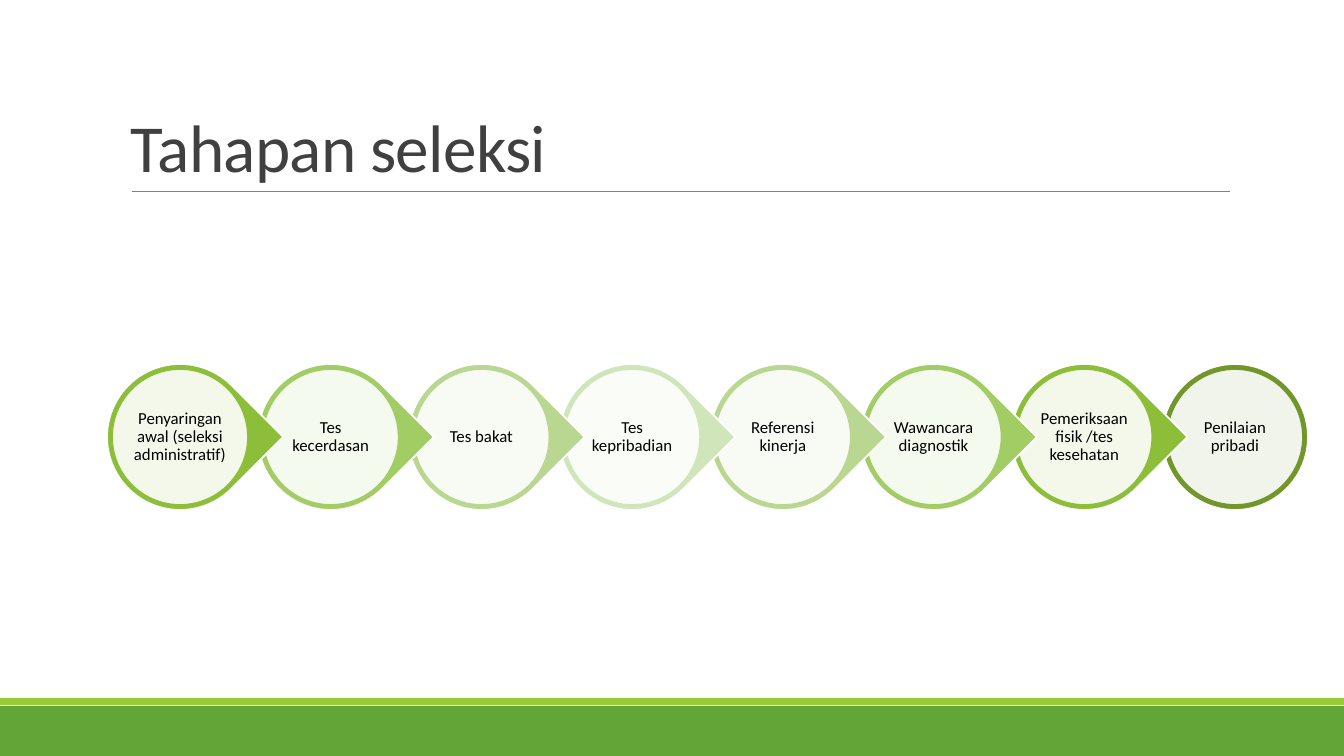
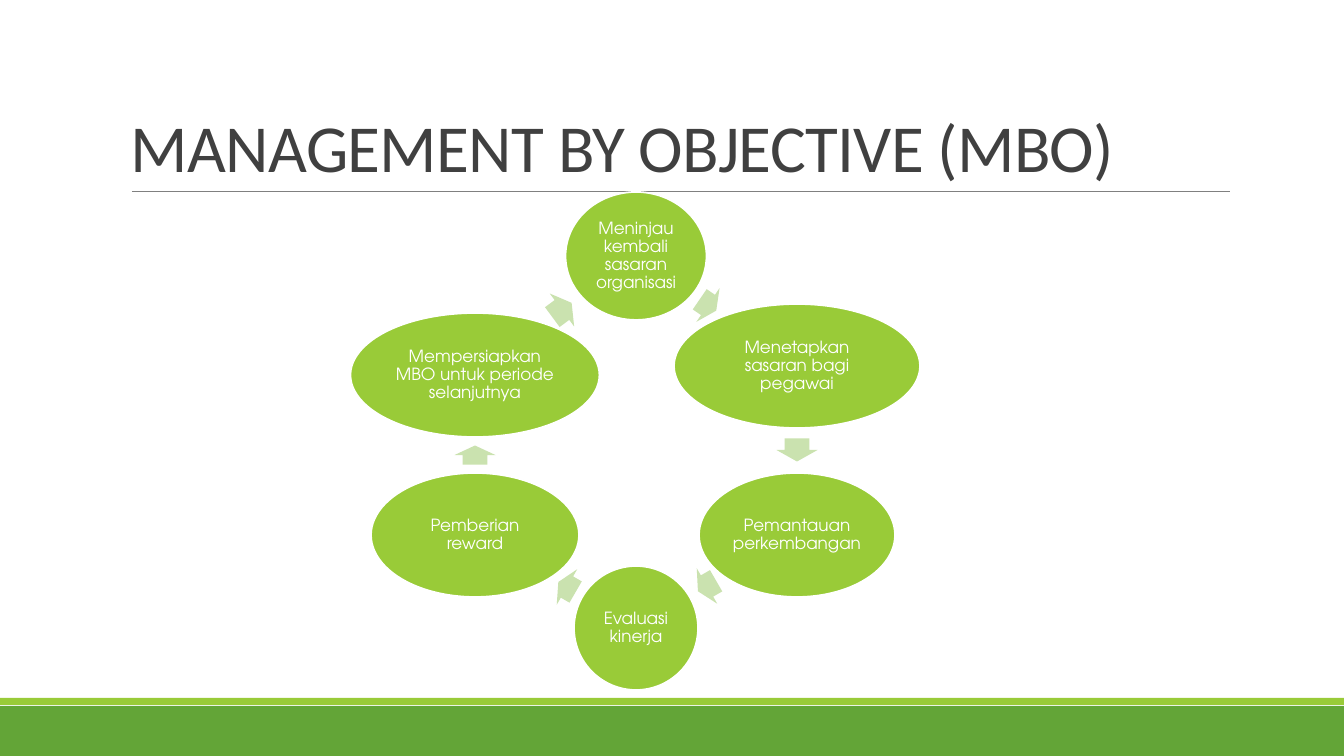
from dataclasses import dataclass
from typing import NamedTuple

from lxml.etree import SubElement
from pptx import Presentation
from pptx.dml.color import RGBColor
from pptx.enum.shapes import MSO_CONNECTOR as Connector, MSO_SHAPE as Shape
from pptx.enum.text import MSO_ANCHOR as Anchor, PP_ALIGN as Align
from pptx.oxml.ns import qn
from pptx.util import Emu, Pt

EMU_PER_PX = 914400 / 100.8


@dataclass(frozen=True)
class Theme:
    """Colours, fonts and type sizes shared by the slides."""
    white: str = "FFFFFF"
    black: str = "000000"
    title: str = "404040"
    rule: str = "808080"
    band: str = "63A537"
    accent: str = "99CB38"
    arrow: str = "CAE2AF"
    stages: tuple = ("8DBE39", "A2CC64", "B9D790", "D1E5BB",
                     "B9D790", "A2CC64", "8DBE39", "719629")
    body_font: str = "Calibri"
    cycle_font: str = "TeX Gyre Adventor"
    title_size: int = 48
    label_size: int = 12
    outline: float = 1.25
    rule_width: float = 0.5


class Box(NamedTuple):
    """A rectangle in px."""
    left: float
    top: float
    width: float
    height: float


class Step(NamedTuple):
    """A cycle step and the arrow after it, as px offsets from the cycle centre."""
    label: str
    centre: tuple
    size: tuple
    arrow_centre: tuple
    arrow_length: int
    arrow_angle: float


THEME = Theme()
SLIDE = Box(0, 0, 1344, 756)
TITLE = Box(121, 31, 1109, 160)
STAGE_ROW = Box(107, 364, 1201, 146)
CYCLE = Box(352, 192, 568, 496)
RING = 5
ARROW_WIDTH = 41
COLUMN = 161

STAGES = (
    "Penyaringan awal (seleksi administratif)", "Tes kecerdasan", "Tes bakat",
    "Tes kepribadian", "Referensi kinerja", "Wawancara diagnostik",
    "Pemeriksaan fisik /tes kesehatan", "Penilaian pribadi",
)
STEPS = (
    Step("Meninjau kembali sasaran organisasi",
         (0, -184), (141, 128), (72, -135), 20, 34.5),
    Step("Menetapkan sasaran bagi pegawai",
         (COLUMN, -74), (246, 124), (COLUMN, 10), 23, 90),
    Step("Pemantauan perkembangan",
         (COLUMN, 95), (196, 124), (71, 146), 21, 150),
    Step("Evaluasi kinerja",
         (0, 188), (124, 124), (-69, 147), 20, 210),
    Step("Pemberian reward",
         (-COLUMN, 95), (208, 124), (-COLUMN, 15), 19, 270),
    Step("Mempersiapkan MBO untuk periode selanjutnya",
         (-COLUMN, -65), (249, 124), (-74, -130), 24, 323.5),
)


def px(length):
    """Turn px into EMU."""
    return Emu(round(length * EMU_PER_PX))


def emu_box(box):
    """Turn a px box into EMU lengths."""
    return [px(length) for length in box]


def centred(box, offset, size):
    """Return a box of a size whose centre is offset from another box's centre."""
    return Box(box.left + box.width / 2 + offset[0] - size[0] / 2,
               box.top + box.height / 2 + offset[1] - size[1] / 2, *size)


def write(holder, text, *, size, font, colour, align=Align.CENTER,
          anchor=Anchor.MIDDLE, inset=(0, 0), leading=0.9, tracking=None):
    """Write one formatted paragraph into a shape or text box."""
    frame = holder.text_frame
    frame.word_wrap = True
    frame.vertical_anchor = anchor
    frame.margin_left = frame.margin_right = px(inset[0])
    frame.margin_top = frame.margin_bottom = px(inset[1])
    paragraph = frame.paragraphs[0]
    paragraph.alignment = align
    paragraph.line_spacing = leading
    run = paragraph.add_run()
    run.text = text
    run.font.size = Pt(size)
    run.font.name = font
    run.font.color.rgb = RGBColor.from_string(colour)
    if tracking is not None:
        run.font._element.set("spc", str(round(tracking * 100)))


def draw(slide, kind, box, fill, *, line=None, angle=0, adjust=(), opacity=None):
    """Draw one flat preset shape."""
    shape = slide.shapes.add_shape(kind, *emu_box(box))
    shape.shadow.inherit = False
    shape.rotation = angle
    for index, value in enumerate(adjust):
        shape.adjustments[index] = value
    shape.fill.solid()
    shape.fill.fore_color.rgb = RGBColor.from_string(fill)
    if opacity is not None:
        colour = shape._element.spPr.find(qn("a:solidFill"))[0]
        SubElement(colour, qn("a:alpha"), val=str(opacity * 1000))
    if line:
        shape.line.color.rgb = RGBColor.from_string(line)
        shape.line.width = Pt(THEME.outline)
    else:
        shape.line.fill.background()
    return shape


def add_bands(slide, box):
    """Draw the two bands along the bottom of the box."""
    bottom = box.top + box.height
    draw(slide, Shape.RECTANGLE, Box(box.left, bottom - 50, box.width, 50), THEME.band)
    draw(slide, Shape.RECTANGLE, Box(box.left, bottom - 58, box.width, 7), THEME.accent)


def add_title(slide, box, text):
    """Place the title and the rule beneath it."""
    bottom = box.top + box.height
    rule = slide.shapes.add_connector(
        Connector.STRAIGHT, px(box.left + 11), px(bottom),
        px(box.left + box.width), px(bottom))
    rule.line.color.rgb = RGBColor.from_string(THEME.rule)
    rule.line.width = Pt(THEME.rule_width)
    SubElement(rule._element.spPr, qn("a:effectLst"))
    write(slide.shapes.add_textbox(*emu_box(box)), text, size=THEME.title_size,
          font=THEME.body_font, colour=THEME.title, align=Align.LEFT,
          anchor=Anchor.BOTTOM, inset=(10, 5), leading=0.85, tracking=-0.5)


def add_stages(slide, box, labels):
    """Chain the stages from left to right, each one overlapping the next."""
    diameter = box.height
    pitch = (box.width - diameter) / (len(labels) - 1)
    last = len(labels) - 1
    for index in reversed(range(len(labels))):
        colour = THEME.stages[index]
        outer = Box(box.left + index * pitch, box.top, diameter, diameter)
        if index == last:
            draw(slide, Shape.OVAL, outer, colour, line=THEME.white)
        else:
            draw(slide, Shape.TEAR, outer, colour, line=THEME.white,
                 angle=45, adjust=(1,))
        inner = centred(outer, (0, 0), (diameter - 2 * RING, diameter - 2 * RING))
        disc = draw(slide, Shape.OVAL, inner, THEME.white, line=colour, opacity=90)
        write(disc, labels[index], size=THEME.label_size,
              font=THEME.body_font, colour=THEME.black)


def add_cycle(slide, box, steps):
    """Set the steps and their arrows around the centre of the box."""
    for step in steps:
        oval = draw(slide, Shape.OVAL, centred(box, step.centre, step.size),
                    THEME.accent, line=THEME.white)
        write(oval, step.label, size=THEME.label_size, font=THEME.cycle_font,
              colour=THEME.white, inset=(2, 2))
        arrow = centred(box, step.arrow_centre, (step.arrow_length, ARROW_WIDTH))
        draw(slide, Shape.RIGHT_ARROW, arrow, THEME.arrow,
             angle=step.arrow_angle, adjust=(0.6, 0.5))


def add_slide(deck, title):
    """Add a blank slide with the shared bands and title."""
    slide = deck.slides.add_slide(deck.slide_layouts[6])
    add_bands(slide, SLIDE)
    add_title(slide, TITLE, title)
    return slide


def main():
    """Build and save the deck."""
    deck = Presentation()
    deck.slide_width, deck.slide_height = px(SLIDE.width), px(SLIDE.height)
    add_stages(add_slide(deck, "Tahapan seleksi"), STAGE_ROW, STAGES)
    add_cycle(add_slide(deck, "MANAGEMENT BY OBJECTIVE (MBO)"), CYCLE, STEPS)
    deck.save("out.pptx")


if __name__ == "__main__":
    main()
